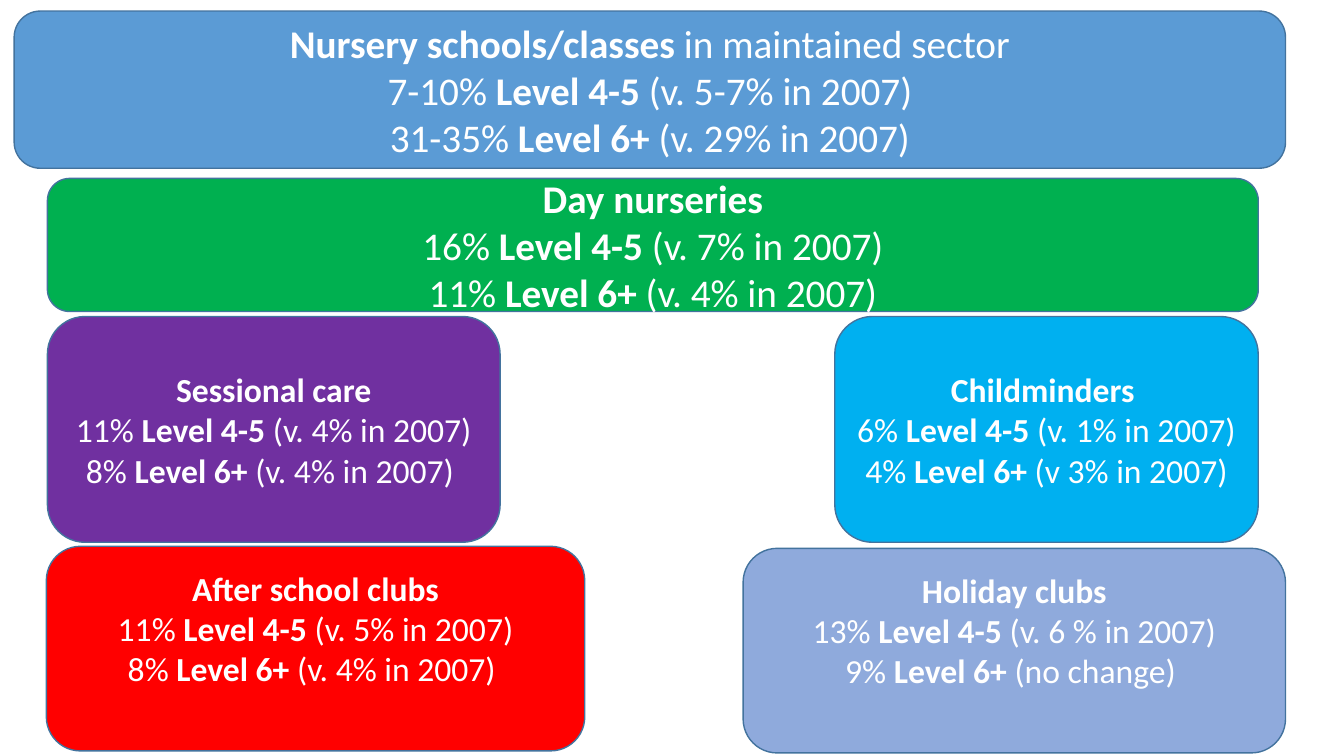
from pptx import Presentation
from pptx import util as u
from pptx.dml.color import RGBColor
from pptx.enum import shapes, text

WHITE = RGBColor(0xFF, 0xFF, 0xFF)
OUTLINE = RGBColor(0x43, 0x73, 0x9E)
BLUE = RGBColor(0x5B, 0x9B, 0xD5)
GREEN = RGBColor(0x00, 0xB0, 0x50)
PURPLE = RGBColor(0x70, 0x30, 0xA0)
SKY = RGBColor(0x00, 0xB0, 0xF0)
RED = RGBColor(0xFF, 0x00, 0x00)
LAVENDER = RGBColor(0x8F, 0xAA, 0xDC)

PX = 9144  # EMU per px, 100 px to the inch
INSET = 5
CLUB_INSET = 46  # lifts the club text by half a line

# box (left, top, width, height), fill, text size, bottom inset, lines
SETTINGS = [
    ((14, 11, 1261, 156), BLUE, 28, INSET,
     ["*Nursery schools/classes *in maintained sector",
      "7-10%* Level 4-5 *(v. 5-7% in 2007)",
      "31-35%* Level 6+* (v. 29% in 2007)"]),
    ((47, 177, 1201, 132), GREEN, 28, INSET,
     ["*Day nurseries",
      "16%* Level 4-5 *(v. 7% in 2007)",
      "11% *Level 6+* (v. 4% in 2007)"]),
    ((47, 314, 449, 224), PURPLE, 24, INSET,
     ["*Sessional care",
      "11%* Level 4-5 *(v. 4% in 2007)",
      "8% *Level 6+* (v. 4% in 2007) "]),
    ((828, 314, 420, 224), SKY, 24, INSET,
     ["*Childminders ",
      "6%* Level 4-5 *(v. 1% in 2007)",
      "4% *Level 6+ *(v 3% in 2007)"]),
    ((46, 542, 534, 203), RED, 24, CLUB_INSET,
     ["*After school clubs",
      "11%* Level 4-5 *(v. 5% in 2007)",
      "8% *Level 6+* (v. 4% in 2007) "]),
    ((737, 544, 538, 203), LAVENDER, 24, CLUB_INSET,
     ["*Holiday clubs",
      "13%* Level 4-5 *(v. 6 % in 2007)",
      "9% *Level 6+* (no change) "]),
]


class SlideBuilder:
    def __init__(self, slide, font_name="Calibri"):
        self.slide = slide
        self.font_name = font_name

    def card(self, box, fill, size, bottom_inset, lines):
        shape = self.slide.shapes.add_shape(
            shapes.MSO_SHAPE.ROUNDED_RECTANGLE, *(value * PX for value in box))
        shape.shadow.inherit = False
        shape.fill.solid()
        shape.fill.fore_color.rgb = fill
        shape.line.color.rgb = OUTLINE
        shape.line.width = u.Pt(1)
        frame = shape.text_frame
        frame_format = {"word_wrap": True,
                        "vertical_anchor": text.MSO_ANCHOR.MIDDLE,
                        "margin_bottom": bottom_inset * PX}
        for name, value in frame_format.items():
            setattr(frame, name, value)
        for index, line in enumerate(lines):
            paragraph = frame.add_paragraph() if index else frame.paragraphs[0]
            self.write_line(paragraph, line, size)

    def write_line(self, paragraph, line, size):
        """Write a centred line in which each * switches bold on or off."""
        paragraph.alignment = text.PP_ALIGN.CENTER
        for index, part in enumerate(line.split("*")):
            if not part:
                continue
            run = paragraph.add_run()
            run.text = part
            run.font.color.rgb = WHITE
            font_format = {"name": self.font_name, "size": u.Pt(size),
                           "bold": index % 2 == 1}
            for name, value in font_format.items():
                setattr(run.font, name, value)


def main():
    presentation = Presentation()
    presentation.slide_width = 1333 * PX
    presentation.slide_height = 750 * PX
    builder = SlideBuilder(
        presentation.slides.add_slide(presentation.slide_layouts[6]))
    for setting in SETTINGS:
        builder.card(*setting)
    presentation.save("out.pptx")


if __name__ == "__main__":
    main()
